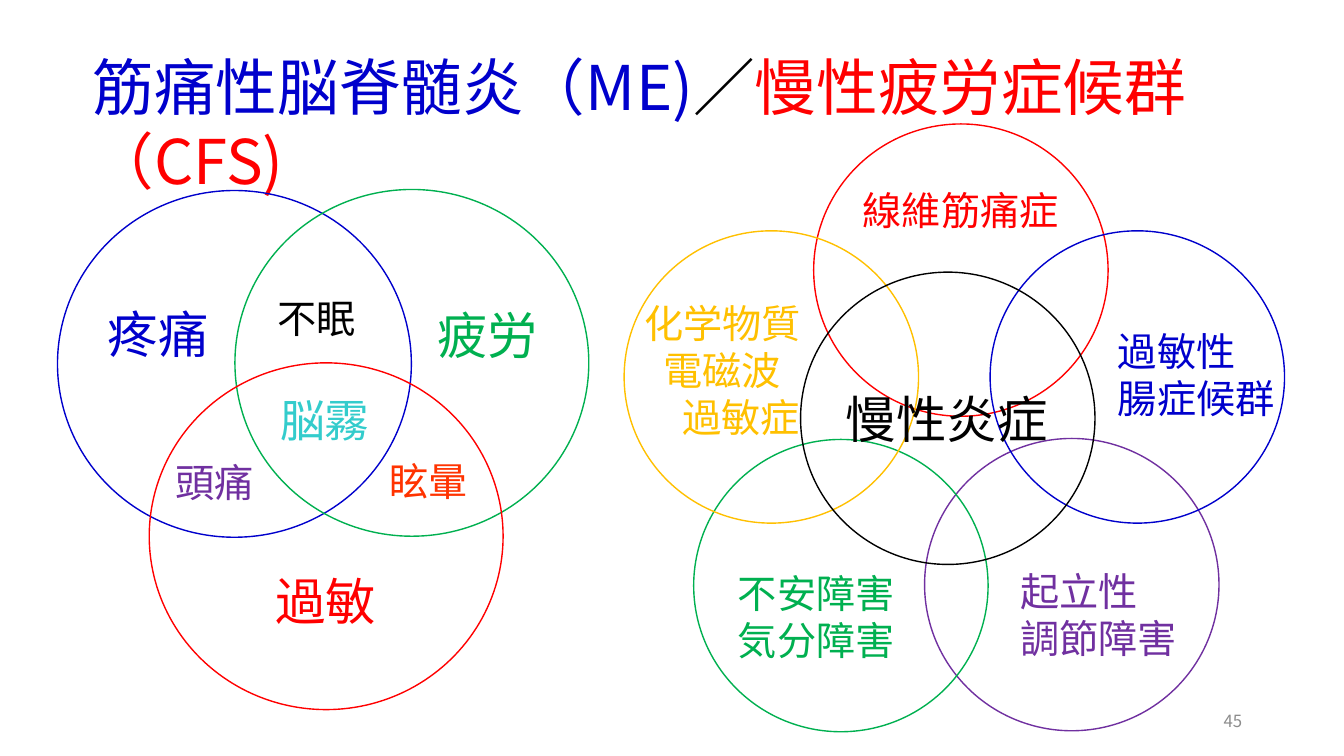
from pptx import Presentation
from pptx.dml.color import RGBColor
from pptx.enum.shapes import MSO_SHAPE as Shape
from pptx.enum.text import MSO_ANCHOR as Anchor, MSO_AUTO_SIZE as AutoSize, PP_ALIGN as Align
from pptx.oxml.ns import qn
from pptx.util import Inches, Pt

# The slide is a fine grid of 1333 columns by 750 rows
COLUMNS, ROWS = 1333, 750
CELL = Inches(0.01)
FONT = "Noto Sans CJK JP"
BLUE, RED, GREEN, PURPLE = "0000CC", "FF0000", "00B050", "7030A0"
YELLOW, BLACK, TEAL, ORANGE, GRAY = "FFC000", "000000", "33CCCC", "FF3300", "8C8C8C"


def color(hex_code):
    return RGBColor.from_string(hex_code)


def cells(*counts):
    return [count * CELL for count in counts]


def style(span, size, ink):
    span.font.size = Pt(size)
    span.font.name = FONT
    span.font.color.rgb = color(ink)
    props = span._r.get_or_add_rPr()
    east_asian = props.makeelement(qn("a:ea"), {"typeface": FONT})
    props.find(qn("a:latin")).addnext(east_asian)


def add_circle(shapes, box, ink):
    circle = shapes.add_shape(Shape.OVAL, *cells(*box))
    circle.shadow.inherit = False
    circle.fill.background()
    circle.line.color.rgb = color(ink)
    circle.line.width = Pt(1)


def add_label(shapes, box, text, size, ink, wrap=False, indent=0):
    """Each further line starts `indent` cells to the right of the one before."""
    label = shapes.add_textbox(*cells(*box))
    frame = label.text_frame
    frame.text = text
    frame.word_wrap = wrap
    frame.auto_size = AutoSize.SHAPE_TO_FIT_TEXT
    for number, para in enumerate(frame.paragraphs):
        if indent:
            para._p.get_or_add_pPr().set("marL", str(number * indent * CELL))
        for span in para.runs:
            style(span, size, ink)
    return label


def title(slide, box):
    frame = slide.shapes.add_textbox(*cells(*box)).text_frame
    frame.word_wrap = True
    para = frame.paragraphs[0]
    for text, ink in (("筋痛性脳脊髄炎（ME)", BLUE), ("／", BLACK), ("慢性疲労症候群（CFS)", RED)):
        span = para.add_run()
        span.text = text
        style(span, 44, ink)


def symptom_circles(slide, left, top):
    """Three overlapping symptoms, named in the circles and in their overlaps."""
    group = slide.shapes.add_group_shape().shapes
    for x, y, ink in ((0, 1, BLUE), (176, 0, GREEN), (91, 172, RED)):
        add_circle(group, (left + x, top + y, 351, 344), ink)
    for x, y, text, ink in ((40, 108, "疼痛", BLUE), (367, 109, "疲労", GREEN),
                            (206, 373, "過敏", RED)):
        add_label(group, (left + x, top + y, 121, 71), text, 36, ink)
    for x, y, text, size, ink in ((211, 197, "脳霧", 32, TEAL), (107, 262, "頭痛", 28, PURPLE),
                                  (319, 261, "眩暈", 28, ORANGE)):
        add_label(group, (left + x, top + y, 109, 2 * size), text, size, ink, wrap=True)
    add_label(slide.shapes, (left + 208, top + 99, 132, 57), "不眠", 28, BLACK, wrap=True)


def disease_circles(slide, left, top):
    """Five diseases around chronic inflammation."""
    group = slide.shapes.add_group_shape().shapes
    for x, y, ink in ((188, 0, RED), (298, 312, PURPLE), (69, 313, GREEN),
                      (0, 106, YELLOW), (363, 106, BLUE)):
        add_circle(group, (left + x, top + y, 292, 290), ink)
    for x, y, width, height, text, ink, wrap, indent in (
            (10, 169, 177, 151, "化学物質\n電磁波\n過敏症", YELLOW, False, 19.5),
            (480, 197, 177, 104, "過敏性\n腸症候群", BLUE, False, 0),
            (227, 57, 217, 57, "線維筋痛症", RED, False, 0),
            (103, 437, 189, 104, "不安障害気分障害", GREEN, True, 0),
            (383, 435, 177, 104, "起立性\n調節障害", PURPLE, False, 0)):
        add_label(group, (left + x, top + y, width, height), text, 28, ink, wrap, int(indent))
    # Shared core
    add_circle(group, (left + 175, top + 147, 292, 290), BLACK)
    add_label(group, (left + 210, top + 257, 222, 71), "慢性炎症", 36, BLACK)


def page_number(slide, box):
    label = add_label(slide.shapes, box, "45", 12, GRAY, wrap=True)
    label.text_frame.auto_size = AutoSize.NONE
    label.text_frame.vertical_anchor = Anchor.MIDDLE
    label.text_frame.paragraphs[0].alignment = Align.RIGHT


def main():
    deck = Presentation()
    deck.slide_width, deck.slide_height = cells(COLUMNS, ROWS)
    page = deck.slides.add_slide(deck.slide_layouts[6])
    title(page, (82, 44, 1238, 84))
    symptom_circles(page, 57, 188)
    page_number(page, (942, 695, 300, 40))
    disease_circles(page, 619, 123)
    deck.save("out.pptx")


if __name__ == "__main__":
    main()
